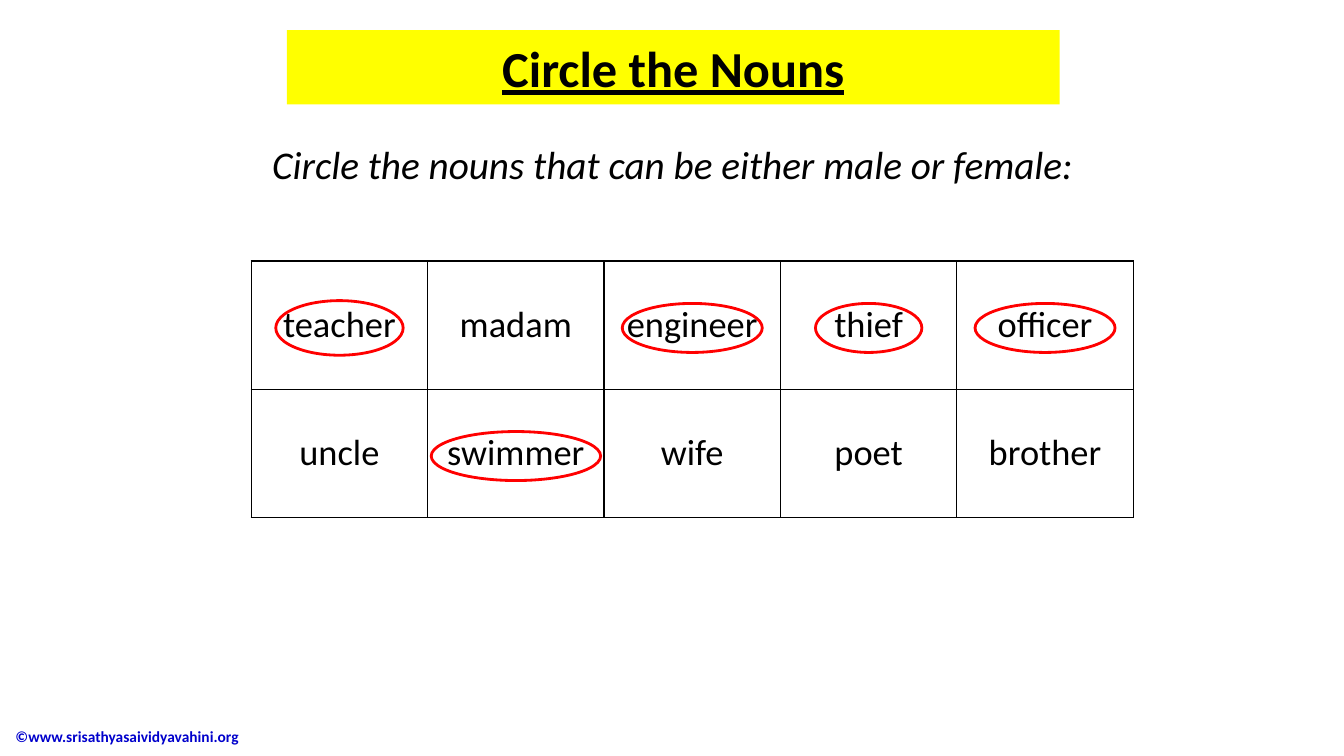
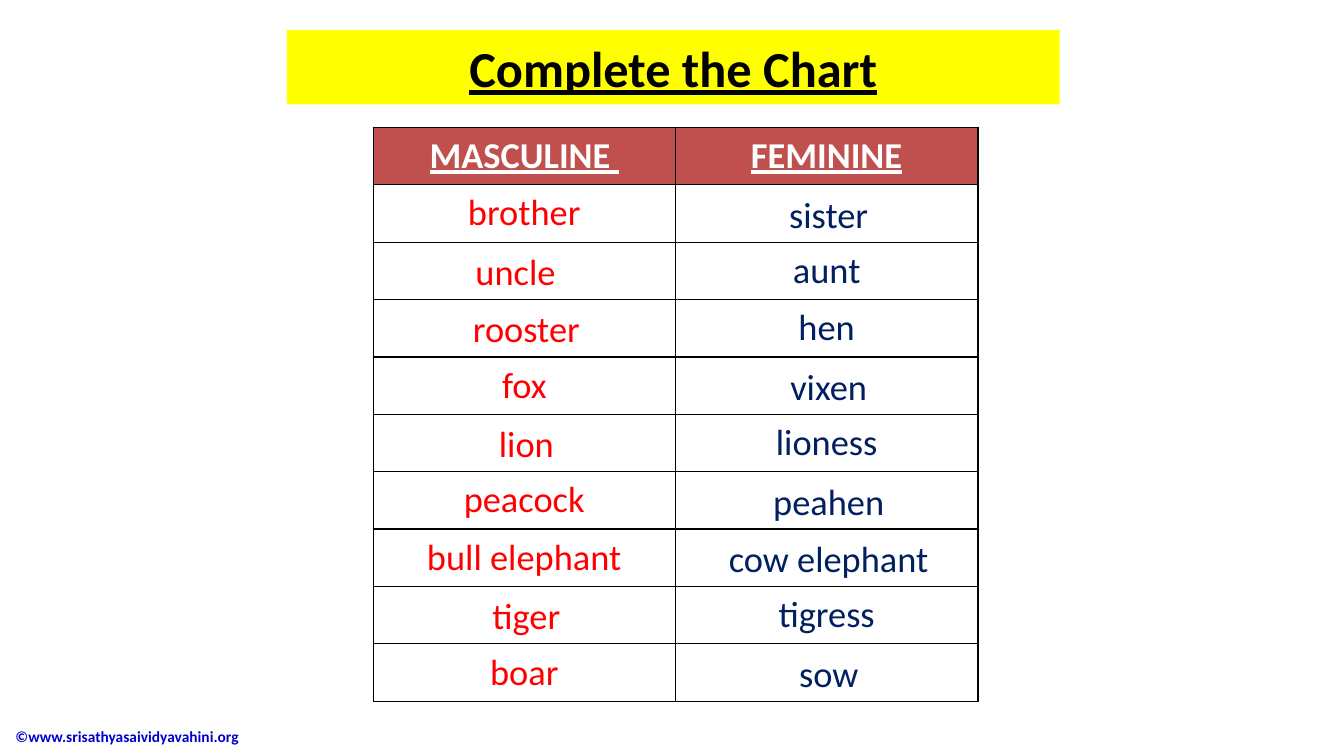
from dataclasses import dataclass

from lxml import etree
from pptx import Presentation
from pptx.dml.color import RGBColor as RGB
from pptx.enum.shapes import MSO_SHAPE as SHAPE
from pptx.enum.text import MSO_ANCHOR as ANCHOR, MSO_AUTO_SIZE as AUTO, PP_ALIGN as ALIGN
from pptx.oxml import parse_xml
from pptx.oxml.ns import nsdecls
from pptx.util import Pt


@dataclass(frozen=True)
class Theme:
    font: str = "Calibri"
    ink: RGB = RGB(0x00, 0x00, 0x00)
    white: RGB = RGB(0xFF, 0xFF, 0xFF)
    band: RGB = RGB(0xFF, 0xFF, 0x00)
    header: RGB = RGB(0xC0, 0x50, 0x4D)
    red: RGB = RGB(0xFF, 0x00, 0x00)
    navy: RGB = RGB(0x00, 0x20, 0x60)
    footer: RGB = RGB(0x00, 0x00, 0xCC)
    title_size: int = 36
    prompt_size: int = 28
    word_size: int = 26
    footer_size: int = 11


T = Theme()


def style_text(tf, size, color, align=ALIGN.CENTER, **flags):
    """Format every run; flags are font switches such as bold=True."""
    tf.word_wrap = True
    tf.vertical_anchor = ANCHOR.MIDDLE
    for p in tf.paragraphs:
        p.alignment = align
        for r in p.runs:
            r.font.name, r.font.size, r.font.color.rgb = T.font, Pt(size), color
            for flag, value in flags.items():
                setattr(r.font, flag, value)


def add_grid(s, rows, left, top, col_w, row_h, colors):
    """Add an unfilled, black-ruled table with one text colour per column."""
    n_rows, n_cols = len(rows), len(rows[0])
    table = s.shapes.add_table(n_rows, n_cols, Pt(left), Pt(top),
                               Pt(col_w * n_cols), Pt(row_h * n_rows)).table
    table.first_row = table.horz_banding = False
    for i, row in enumerate(rows):
        table.rows[i].height = Pt(row_h)
        for j, word in enumerate(row):
            cell = table.cell(i, j)
            cell.text_frame.text = word
            style_text(cell.text_frame, T.word_size, colors[j])
            cell.vertical_anchor = ANCHOR.MIDDLE
            tc_pr = cell._tc.get_or_add_tcPr()
            for side in "LRTB":
                tc_pr.append(parse_xml(
                    f'<a:ln{side} {nsdecls("a")} w="{Pt(1)}"><a:solidFill>'
                    f'<a:srgbClr val="{T.ink}"/></a:solidFill></a:ln{side}>'))
            cell.fill.background()
    return table


prs = Presentation()
prs.slide_width, prs.slide_height = Pt(960), Pt(540)
layout = prs.slide_layouts[5]

# Titles
slides = []
for title in ("Circle the Nouns", "Complete the Chart"):
    s = prs.slides.add_slide(layout)
    sp = s.shapes.title
    sp.left, sp.top, sp.width, sp.height = Pt(205), Pt(21.5), Pt(552), Pt(53)
    sp.fill.solid()
    sp.fill.fore_color.rgb = T.band
    sp.text_frame.text = title
    sp.text_frame.auto_size = AUTO.NONE
    style_text(sp.text_frame, T.title_size, T.ink, bold=True, underline=True)
    slides.append(s)
nouns, chart = slides

# Footer, moved to the layout that both slides share
sp = nouns.shapes.add_textbox(Pt(4), Pt(511), Pt(255), Pt(30))
sp.text_frame.text = "©www.srisathyasaividyavahini.org"
style_text(sp.text_frame, T.footer_size, T.footer, ALIGN.LEFT, bold=True)
sp.element.nvSpPr.cNvPr.set("id", "20")
layout.shapes.element.append(sp.element)

# Circle the nouns
sp = nouns.shapes.add_textbox(Pt(168.5), Pt(96.5), Pt(623.5), Pt(41))
sp.text_frame.text = "Circle the nouns that can be either male or female:"
style_text(sp.text_frame, T.prompt_size, T.ink, italic=True)

words = [("teacher", "madam", "engineer", "thief", "officer"),
         ("uncle", "swimmer", "wife", "poet", "brother")]
left, top, col_w, row_h = 179.5, 186.5, 126, 91.5
add_grid(nouns, words, left, top, col_w, row_h, [T.ink] * 5)

circle_sizes = {"teacher": (91, 39), "engineer": (100, 35), "swimmer": (121, 35),
                "thief": (76, 35), "officer": (100, 35)}
circle_drop = 2
for i, row in enumerate(words):
    for j, word in enumerate(row):
        if word not in circle_sizes:
            continue
        w, h = circle_sizes[word]
        x = left + (j + 0.5) * col_w - w / 2
        y = top + (i + 0.5) * row_h - h / 2 + circle_drop
        sp = nouns.shapes.add_shape(SHAPE.OVAL, Pt(x), Pt(y), Pt(w), Pt(h))
        sp.shadow.inherit = False
        sp.fill.background()
        sp.line.color.rgb, sp.line.width = T.red, Pt(2)

# Complete the chart: given words sit in cells, answers in boxes over the gaps
pairs = [("MASCULINE ", "FEMININE"), ("brother", ""), ("", "aunt"), ("", "hen"),
         ("fox", ""), ("", "lioness"), ("peacock", ""), ("bull elephant", ""),
         ("", "tigress"), ("boar", "")]
left, top, col_w, row_h = 266.5, 91, 216, 41
colors = [T.red, T.navy]
table = add_grid(chart, pairs, left, top, col_w, row_h, colors)
for cell in table.rows[0].cells:
    cell.fill.solid()
    cell.fill.fore_color.rgb = T.header
    style_text(cell.text_frame, T.word_size, T.white, bold=True, underline=True)

answers = [("sister", 80), ("uncle", 87), ("rooster", 109), ("vixen", 80), ("lion", 73),
           ("peahen", 103), ("cow elephant", 164), ("tiger", 78), ("sow", 66)]
box_h, nudge = 29, 1.5
for i, (answer, w) in enumerate(answers, start=1):
    j = pairs[i].index("")
    x = left + (j + 0.5) * col_w - w / 2 + nudge
    y = top + (i + 0.5) * row_h - box_h / 2
    sp = chart.shapes.add_textbox(Pt(x), Pt(y), Pt(w), Pt(box_h))
    sp.text_frame.text = answer
    align = ALIGN.LEFT if answer == "uncle" else ALIGN.CENTER
    style_text(sp.text_frame, T.word_size, colors[j], align)

prs.save("out.pptx")
